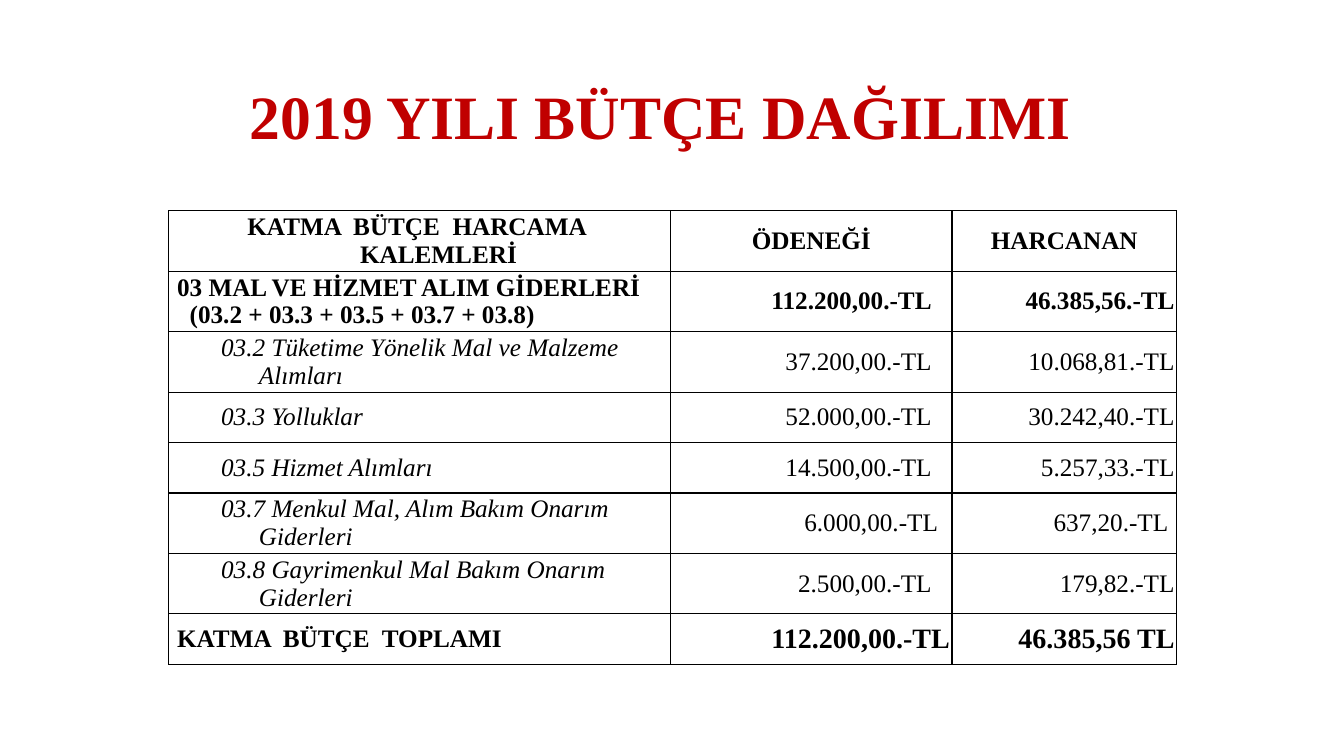
"""Build the 2019 budget distribution slide."""
from lxml.etree import SubElement
from pptx import Presentation
from pptx.dml.color import RGBColor
from pptx.enum.text import MSO_ANCHOR, PP_ALIGN
from pptx.oxml.ns import qn
from pptx.util import Pt

RED = RGBColor(0xC0, 0x00, 0x00)
BLACK = RGBColor(0x00, 0x00, 0x00)
HANG = 27
INSET = 1.5
ONE_LINE, TWO_LINES = 36, 43.2


def write(p, text, size=18, color=BLACK, bold=False, italic=False,
          align=PP_ALIGN.LEFT, level=0, left=0, first=0):
    p.alignment = align
    p.level = level
    pPr = p._p.get_or_add_pPr()
    pPr.set("marL", str(Pt(left)))
    pPr.set("indent", str(Pt(first - left)))
    r = p.add_run()
    r.text = text
    r.font.name = "Times New Roman"
    r.font.size = Pt(size)
    r.font.bold = bold
    r.font.italic = italic
    r.font.color.rgb = color


def add_borders(cell):
    tcPr = cell._tc.get_or_add_tcPr()
    for side in ("a:lnL", "a:lnR", "a:lnT", "a:lnB"):
        ln = SubElement(tcPr, qn(side), w=str(Pt(1)))
        fill = SubElement(ln, qn("a:solidFill"))
        SubElement(fill, qn("a:srgbClr"), val=str(BLACK))


prs = Presentation()
prs.slide_width, prs.slide_height = Pt(960), Pt(540)
s = prs.slides.add_slide(prs.slide_layouts[5])

title = s.shapes.title
title.left, title.top, title.width, title.height = Pt(153.5), Pt(51.5), Pt(648), Pt(60.5)
tf = title.text_frame
tf.word_wrap = True
tf.vertical_anchor = MSO_ANCHOR.MIDDLE
tf.margin_right = Pt(18.5)
write(tf.paragraphs[0], "2019 YILI BÜTÇE DAĞILIMI", size=44, color=RED,
      bold=True, align=PP_ALIGN.CENTER)

header = dict(bold=True, align=PP_ALIGN.CENTER, left=HANG)
group = dict(bold=True, left=HANG, first=4.5)
item = dict(italic=True, level=1, left=63, first=36)
amount = dict(align=PP_ALIGN.RIGHT, left=HANG)
bold_amount = dict(amount, bold=True)
total_amount = dict(bold_amount, size=20)

rows = [
    (["KATMA  BÜTÇE  HARCAMA  KALEMLERİ", "ÖDENEĞİ", "HARCANAN"],
     TWO_LINES, header, header, (0, 0)),
    (["03 MAL VE HİZMET ALIM GİDERLERİ", "112.200,00.-TL", "46.385,56.-TL"],
     TWO_LINES, group, bold_amount, (13, 0)),
    (["03.2 Tüketime Yönelik Mal ve Malzeme Alımları", "37.200,00.-TL", "10.068,81.-TL"],
     TWO_LINES, item, amount, (13, 0)),
    (["03.3 Yolluklar", "52.000,00.-TL", "30.242,40.-TL"],
     ONE_LINE, item, amount, (13, 0)),
    (["03.5 Hizmet Alımları", "14.500,00.-TL", "5.257,33.-TL"],
     ONE_LINE, item, amount, (13, 0)),
    (["03.7 Menkul Mal, Alım Bakım Onarım Giderleri", "6.000,00.-TL", "637,20.-TL"],
     TWO_LINES, item, amount, (8.5, 4.5)),
    (["03.8 Gayrimenkul Mal Bakım Onarım Giderleri", "2.500,00.-TL", "179,82.-TL"],
     TWO_LINES, item, amount, (13, 0)),
    (["KATMA  BÜTÇE  TOPLAMI", "112.200,00.-TL", "46.385,56 TL"],
     ONE_LINE, group, total_amount, (0, 0)),
]

table = s.shapes.add_table(len(rows), 3, Pt(120.5), Pt(150.5), Pt(720), Pt(324)).table
table.first_row = table.horz_banding = False
for col, width in zip(table.columns, (358.5, 201, 160.5)):
    col.width = Pt(width)

for i, (texts, height, label_format, amount_format, gaps) in enumerate(rows):
    table.rows[i].height = Pt(height)
    formats = (label_format, amount_format, amount_format)
    for j, (text, fmt, gap) in enumerate(zip(texts, formats, (0, *gaps))):
        cell = table.cell(i, j)
        cell.margin_left, cell.margin_right = Pt(INSET), Pt(INSET + gap)
        cell.margin_top = cell.margin_bottom = 0
        cell.vertical_anchor = MSO_ANCHOR.MIDDLE
        add_borders(cell)
        cell.fill.background()
        write(cell.text_frame.paragraphs[0], text, **fmt)

write(table.cell(1, 0).text_frame.add_paragraph(),
      "(03.2 + 03.3 + 03.5 + 03.7 + 03.8)", bold=True, left=HANG, first=13.5)

prs.save("out.pptx")
